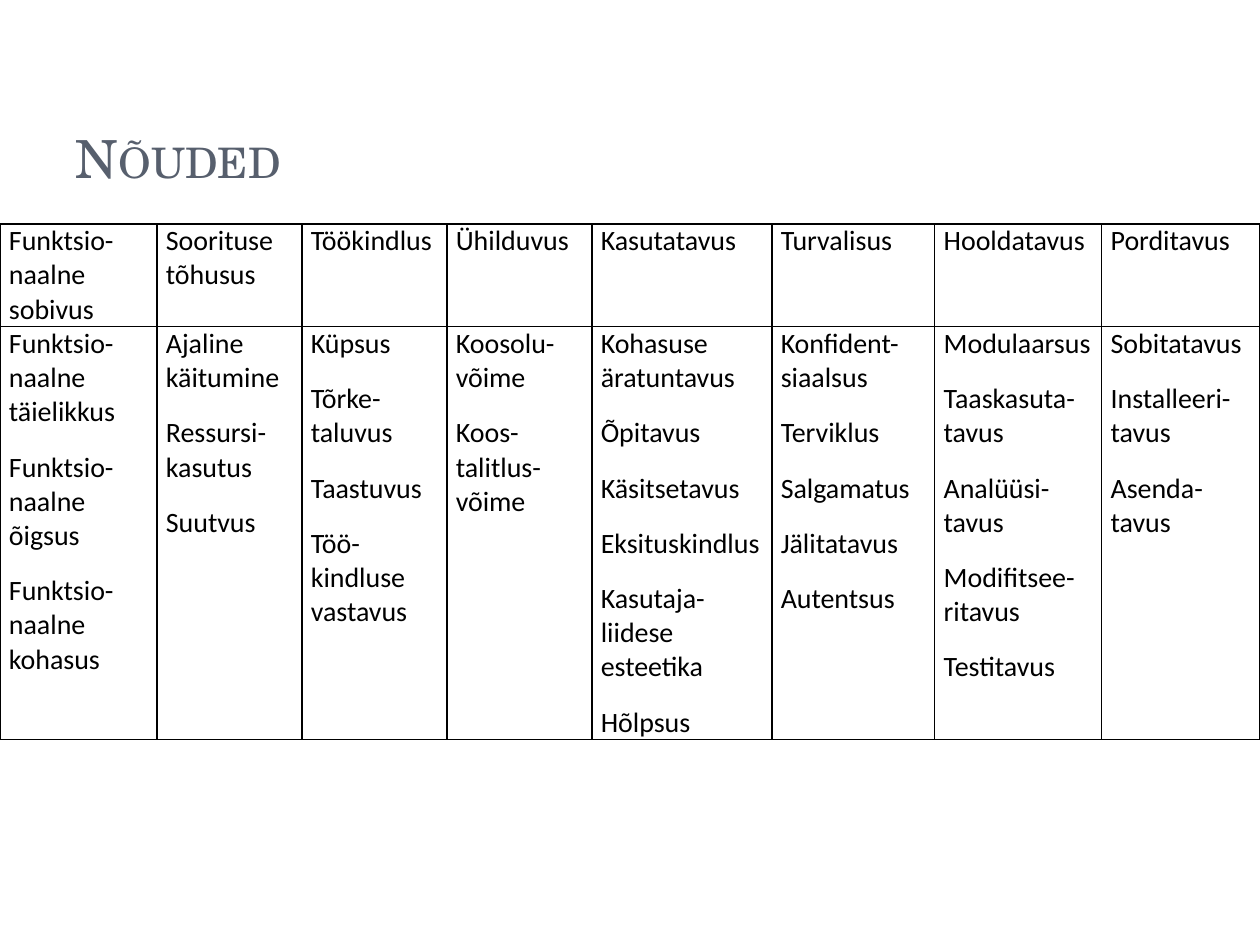
from lxml import etree
from pptx import Presentation
from pptx.dml.color import RGBColor
from pptx.enum.text import MSO_ANCHOR, PP_ALIGN
from pptx.oxml.ns import qn
from pptx.util import Pt

PX = 914400 // 126
LEFT = PP_ALIGN.LEFT
JUSTIFY = PP_ALIGN.JUSTIFY
BOTTOM = MSO_ANCHOR.BOTTOM
TITLE_ONLY = 5

BLACK = "000000"
SLATE = "575F6D"
COLUMN_WIDTHS = [157, 145, 145, 145, 180, 163, 167, 158]
ROW_HEIGHTS = [102, 413]
REQUIREMENTS = {
    "Funktsio-naalne sobivus": [
        "Funktsio-naalne täielikkus", "Funktsio-naalne õigsus", "Funktsio-naalne kohasus"],
    "Soorituse tõhusus": ["Ajaline käitumine", "Ressursi-kasutus", "Suutvus"],
    "Töökindlus": ["Küpsus", "Tõrke-taluvus", "Taastuvus", "Töö-kindluse vastavus"],
    "Ühilduvus": ["Koosolu-võime", "Koos-talitlus-võime"],
    "Kasutatavus": [
        "Kohasuse äratuntavus", "Õpitavus", "Käsitsetavus", "Eksituskindlus",
        "Kasutaja-liidese esteetika", "Hõlpsus"],
    "Turvalisus": [
        "Konfident-siaalsus", "Terviklus", "Salgamatus", "Jälitatavus", "Autentsus"],
    "Hooldatavus": [
        "Modulaarsus", "Taaskasuta-tavus", "Analüüsi-tavus", "Modifitsee-ritavus", "Testitavus"],
    "Porditavus": ["Sobitatavus", "Installeeri-tavus", "Asenda-tavus"],
}


def px(length):
    """Turn whole pixels into EMU."""
    return length * PX


def colour(code):
    """Turn a hex string into a colour."""
    return RGBColor.from_string(code)


def add_span(para, text, font, size, code):
    """Add one formatted run to a paragraph."""
    span = para.add_run()
    span.text = text
    span.font.name = font
    span.font.size = Pt(size)
    span.font.color.rgb = colour(code)
    return span


def set_title(page, text):
    """Place the title and write it in small capitals."""
    title = page.shapes.title
    title.left, title.top, title.width, title.height = map(px, (63, 38, 1029, 157))
    title.text_frame.vertical_anchor = BOTTOM
    para = title.text_frame.paragraphs[0]
    para.alignment = LEFT
    span = add_span(para, text, "TeX Gyre Schola", 30, SLATE)
    span.font.bold = False
    span._r.get_or_add_rPr().set("cap", "small")


def add_borders(cell):
    """Draw a thin black line on each side of a cell."""
    properties = cell._tc.get_or_add_tcPr()
    for side in ("lnL", "lnR", "lnT", "lnB"):
        line = etree.SubElement(properties, qn(f"a:{side}"), w=str(Pt(1)))
        fill = etree.SubElement(line, qn("a:solidFill"))
        etree.SubElement(fill, qn("a:srgbClr"), val=BLACK)


def fill_cell(cell, lines):
    """Write one justified paragraph per line into a bordered cell."""
    cell.margin_left = cell.margin_right = px(9)
    cell.margin_top = cell.margin_bottom = 0
    add_borders(cell)
    cell.fill.background()
    frame = cell.text_frame
    for index, text in enumerate(lines):
        para = frame.add_paragraph() if index else frame.paragraphs[0]
        para.alignment = JUSTIFY
        para.space_after = Pt(12)
        add_span(para, text, "Calibri", 16, BLACK)


def add_requirements_table(page):
    """Add the table of qualities and their parts."""
    frame = page.shapes.add_table(
        len(ROW_HEIGHTS), len(COLUMN_WIDTHS), 0, px(224),
        px(sum(COLUMN_WIDTHS)), px(sum(ROW_HEIGHTS)))
    table = frame.table
    table.first_row = table.horz_banding = False
    for row, height in zip(table.rows, ROW_HEIGHTS):
        row.height = px(height)
    for column, width in zip(table.columns, COLUMN_WIDTHS):
        column.width = px(width)
    for index, (quality, parts) in enumerate(REQUIREMENTS.items()):
        fill_cell(table.cell(0, index), [quality])
        fill_cell(table.cell(1, index), parts)


def main():
    """Build the requirements slide."""
    deck = Presentation()
    deck.slide_width, deck.slide_height = px(1260), px(945)
    page = deck.slides.add_slide(deck.slide_layouts[TITLE_ONLY])
    set_title(page, "Nõuded")
    add_requirements_table(page)
    deck.save("out.pptx")


if __name__ == "__main__":
    main()
